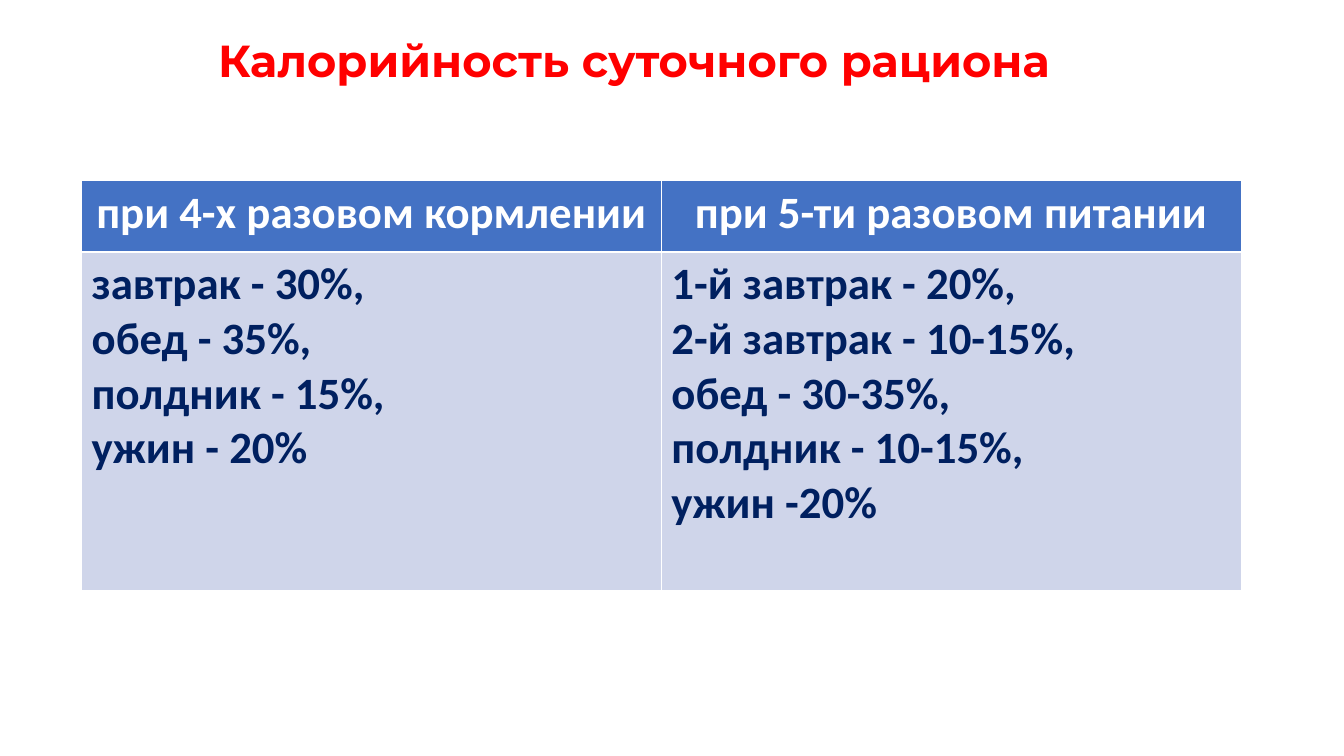
from dataclasses import dataclass

import lxml.etree
import pptx
import pptx.dml.color
import pptx.enum.text
import pptx.oxml.ns
import pptx.table
import pptx.text.text
import pptx.util

Inches = pptx.util.Inches
RGBColor = pptx.dml.color.RGBColor
ALIGN = pptx.enum.text.PP_ALIGN

RED = RGBColor(0xFF, 0x00, 0x00)
WHITE = RGBColor(0xFF, 0xFF, 0xFF)
NAVY = RGBColor(0x00, 0x20, 0x60)
BLUE = RGBColor(0x44, 0x72, 0xC4)
PALE_BLUE = RGBColor(0xCF, 0xD5, 0xEA)

COLUMN_WIDTH = Inches(5.75)
ROW_HEIGHTS = (Inches(0.71), Inches(3.36))


@dataclass(frozen=True)
class TextStyle:
    font: str
    color: RGBColor
    align: ALIGN


@dataclass(frozen=True)
class FeedingPlan:
    heading: str
    meals: tuple[str, ...]


TITLE_STYLE = TextStyle("Montserrat", RED, ALIGN.CENTER)
HEADING_STYLE = TextStyle("Calibri", WHITE, ALIGN.CENTER)
MEAL_STYLE = TextStyle("Calibri", NAVY, ALIGN.LEFT)

PLANS = (
    FeedingPlan(
        "при 4-х разовом кормлении",
        ("завтрак - 30%,", "обед - 35%,", "полдник - 15%,", "ужин - 20%"),
    ),
    FeedingPlan(
        "при 5-ти разовом питании",
        (
            "1-й завтрак - 20%,",
            "2-й завтрак - 10-15%,",
            "обед - 30-35%,",
            "полдник - 10-15%,",
            "ужин -20%",
        ),
    ),
)


def write_lines(
    frame: pptx.text.text.TextFrame, lines: tuple[str, ...], style: TextStyle
) -> None:
    frame.text = "\n".join(lines)
    font_format = {"name": style.font, "size": pptx.util.Pt(32), "bold": True}
    for paragraph in frame.paragraphs:
        paragraph.alignment = style.align
        font = paragraph.runs[0].font
        for attribute, value in font_format.items():
            setattr(font, attribute, value)
        font.color.rgb = style.color


def add_borders(cell: pptx.table._Cell) -> None:
    qn = pptx.oxml.ns.qn
    properties = cell._tc.get_or_add_tcPr()
    for side in ("lnL", "lnR", "lnT", "lnB"):
        border = lxml.etree.SubElement(
            properties, qn(f"a:{side}"), w=str(pptx.util.Pt(1))
        )
        fill = lxml.etree.SubElement(border, qn("a:solidFill"))
        lxml.etree.SubElement(fill, qn("a:srgbClr"), val=str(WHITE))


def fill_cell(
    cell: pptx.table._Cell, lines: tuple[str, ...], style: TextStyle, color: RGBColor
) -> None:
    add_borders(cell)
    cell.fill.solid()
    cell.fill.fore_color.rgb = color
    write_lines(cell.text_frame, lines, style)


def main() -> None:
    presentation = pptx.Presentation()
    presentation.slide_width = Inches(13.33)
    presentation.slide_height = Inches(7.5)
    slide = presentation.slides.add_slide(presentation.slide_layouts[6])

    ration_table = slide.shapes.add_table(
        2, len(PLANS), Inches(0.81), Inches(1.79),
        COLUMN_WIDTH * len(PLANS), sum(ROW_HEIGHTS),
    ).table
    for row, height in zip(ration_table.rows, ROW_HEIGHTS):
        row.height = height
    for index, plan in enumerate(PLANS):
        ration_table.columns[index].width = COLUMN_WIDTH
        fill_cell(ration_table.cell(0, index), (plan.heading,), HEADING_STYLE, BLUE)
        fill_cell(ration_table.cell(1, index), plan.meals, MEAL_STYLE, PALE_BLUE)

    title = slide.shapes.add_textbox(
        Inches(1.06), Inches(0.28), Inches(10.46), Inches(0.64)
    ).text_frame
    title.word_wrap = True
    title.auto_size = pptx.enum.text.MSO_AUTO_SIZE.SHAPE_TO_FIT_TEXT
    write_lines(title, ("Калорийность суточного рациона",), TITLE_STYLE)

    presentation.save("out.pptx")


if __name__ == "__main__":
    main()
